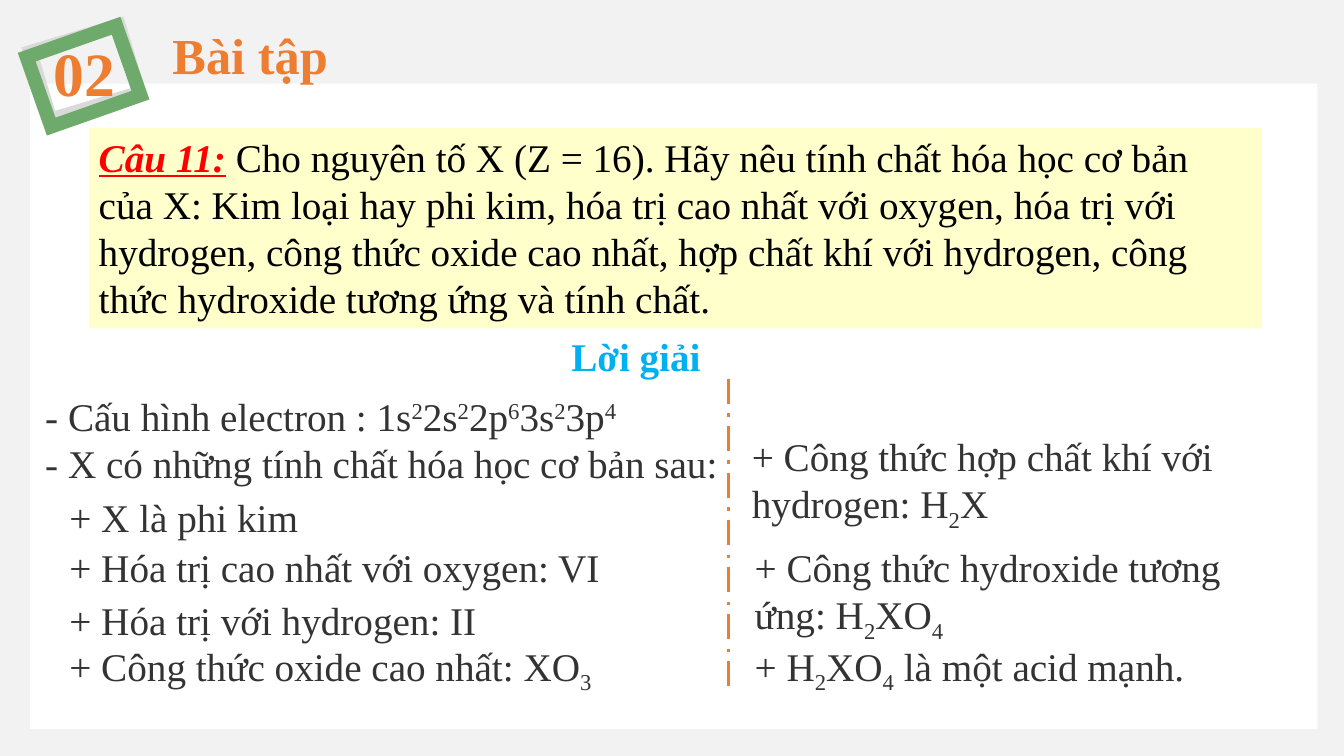
import pptx
import pptx.dml.color
import pptx.enum.dml
import pptx.enum.shapes
import pptx.enum.text
import pptx.oxml
import pptx.oxml.ns
import pptx.util

Pt = pptx.util.Pt
COLORS = {
    "back": "F2F2F2", "panel": "FFFFFF", "grey": "D9D9D9", "green": "6EAA6B",
    "orange": "ED7D31", "yellow": "FFFFCC", "red": "FF0000", "black": "000000",
    "blue": "00B0F0", "text": "333333",
}
BASELINES = {"^": "30000", "_": "-25000"}


def rgb(name):
    return pptx.dml.color.RGBColor.from_string(COLORS[name])


def drawing_tag(name):
    return pptx.oxml.parse_xml(f"<a:{name} {pptx.oxml.ns.nsdecls('a')}/>")


class SlideBuilder:
    font = {"name": "Times New Roman", "size": Pt(28)}

    def __init__(self, prs):
        self.s = prs.slides.add_slide(prs.slide_layouts[5])
        self.s.background.fill.solid()
        self.s.background.fill.fore_color.rgb = rgb("back")

    def rect(self, box, fill=None, line=None, width=10, rotation=0):
        kind = pptx.enum.shapes.MSO_SHAPE.RECTANGLE
        sp = self.s.shapes.add_shape(kind, *map(Pt, box))
        sp.shadow.inherit = False
        sp.rotation = rotation
        if fill:
            sp.fill.solid()
            sp.fill.fore_color.rgb = rgb(fill)
        else:
            sp.fill.background()
        if line:
            sp.line.color.rgb = rgb(line)
            sp.line.width = Pt(width)
            miter = drawing_tag("miter")
            miter.set("lim", "800000")
            sp.line._get_or_add_ln().append(miter)
        else:
            sp.line.fill.background()
        return sp

    def frame(self, sp, wrap=True):
        tf = sp.text_frame
        settings = {
            "word_wrap": wrap,
            "auto_size": pptx.enum.text.MSO_AUTO_SIZE.NONE,
            "vertical_anchor": pptx.enum.text.MSO_ANCHOR.TOP,
            "margin_left": Pt(7.2), "margin_right": Pt(7.2),
            "margin_top": Pt(3.6), "margin_bottom": Pt(3.6),
        }
        for key, value in settings.items():
            setattr(tf, key, value)
        tf.paragraphs[0].alignment = pptx.enum.text.PP_ALIGN.LEFT
        return tf

    def run(self, p, text, color="text", baseline=None, **style):
        r = p.add_run()
        r.text = text
        for key, value in {**self.font, **style}.items():
            setattr(r.font, key, value)
        r.font.color.rgb = rgb(color)
        if baseline:
            r._r.get_or_add_rPr().set("baseline", baseline)

    def title(self, box, text, **style):
        sp = self.s.shapes.title
        sp.left, sp.top, sp.width, sp.height = map(Pt, box)
        # Bring the title in front of the panel
        self.s.shapes._spTree.append(sp._element)
        self.run(self.frame(sp, wrap=False).paragraphs[0], text, **style)

    def label(self, box, text, **style):
        sp = self.s.shapes.add_textbox(*map(Pt, box))
        self.run(self.frame(sp, wrap=False).paragraphs[0], text, **style)

    def formula(self, box, *lines):
        """Runs are split by |; a leading ^ or _ raises or lowers a run."""
        tf = self.frame(self.s.shapes.add_textbox(*map(Pt, box)))
        for i, line in enumerate(lines):
            p = tf.add_paragraph() if i else tf.paragraphs[0]
            for part in line.split("|"):
                baseline = BASELINES.get(part[0])
                self.run(p, part[1:] if baseline else part, baseline=baseline)

    def divider(self, x, top, bottom):
        kind = pptx.enum.shapes.MSO_CONNECTOR.STRAIGHT
        line = self.s.shapes.add_connector(kind, Pt(x), Pt(top), Pt(x), Pt(bottom))
        line.line.color.rgb = rgb("orange")
        line.line.width = Pt(2.25)
        line.line.dash_style = pptx.enum.dml.MSO_LINE.LONG_DASH_DOT
        line._element.spPr.append(drawing_tag("effectLst"))


def main():
    prs = pptx.Presentation()
    prs.slide_width, prs.slide_height = Pt(960), Pt(540)
    slide = SlideBuilder(prs)

    # Panel and section badge
    slide.rect((21.6, 59.8, 919.4, 460.8), fill="panel")
    slide.rect((27.4, 26.6, 66.2, 50.4), line="grey", rotation=343.2)
    slide.rect((25.9, 28.1, 67.7, 52.6), line="green", rotation=340.6)
    slide.title((116, 13.7, 126.7, 51), "Bài tập", size=Pt(36), color="orange", bold=True)
    slide.label((31, 21.6, 59, 60.5), "02", size=Pt(44), color="orange", bold=True)

    # Question
    question = slide.rect((63.4, 91.4, 838, 143.2), fill="yellow")
    p = slide.frame(question).paragraphs[0]
    slide.run(p, "Câu 11:", "red", bold=True, italic=True, underline=True)
    slide.run(p, " ", "red", bold=True, italic=True)
    slide.run(p, "Cho nguyên tố X (Z = 16). Hãy nêu tính chất hóa học cơ bản của X: "
                 "Kim loại hay phi kim, hóa trị cao nhất với oxygen, hóa trị với hydrogen, "
                 "công thức oxide cao nhất, hợp chất khí với hydrogen, công thức hydroxide "
                 "tương ứng và tính chất.", "black")

    # Answer: left column
    slide.label((401, 234, 108, 41), "Lời giải", color="blue", bold=True)
    left_column = [
        (25.2, 276.5, "- Cấu hình electron : 1s|^2|2s|^2|2p|^6|3s|^2|3p|^4"),
        (25.2, 310.3, "- X có những tính chất hóa học cơ bản sau:"),
        (42.5, 348.5, "+ X là phi kim"),
        (42.5, 384.5, "+ Hóa trị cao nhất với oxygen: VI"),
        (42.5, 422.6, "+ Hóa trị với hydrogen: II"),
        (42.5, 455, "+ Công thức oxide cao nhất: XO|_3"),
    ]
    for x, y, text in left_column:
        slide.formula((x, y, 497, 41), text)

    # Answer: right column
    slide.divider(520.5, 270.7, 496)
    right_column = [
        (530, 305.3, 75, ["+ Công thức hợp chất khí với", "hydrogen: H|_2|X"]),
        (532, 384.5, 75, ["+ Công thức hydroxide tương", "ứng: H|_2|XO|_4"]),
        (532, 455, 41, ["+ H|_2|XO|_4| là một acid mạnh."]),
    ]
    for x, y, height, lines in right_column:
        slide.formula((x, y, 420, height), *lines)

    prs.save("out.pptx")


if __name__ == "__main__":
    main()
